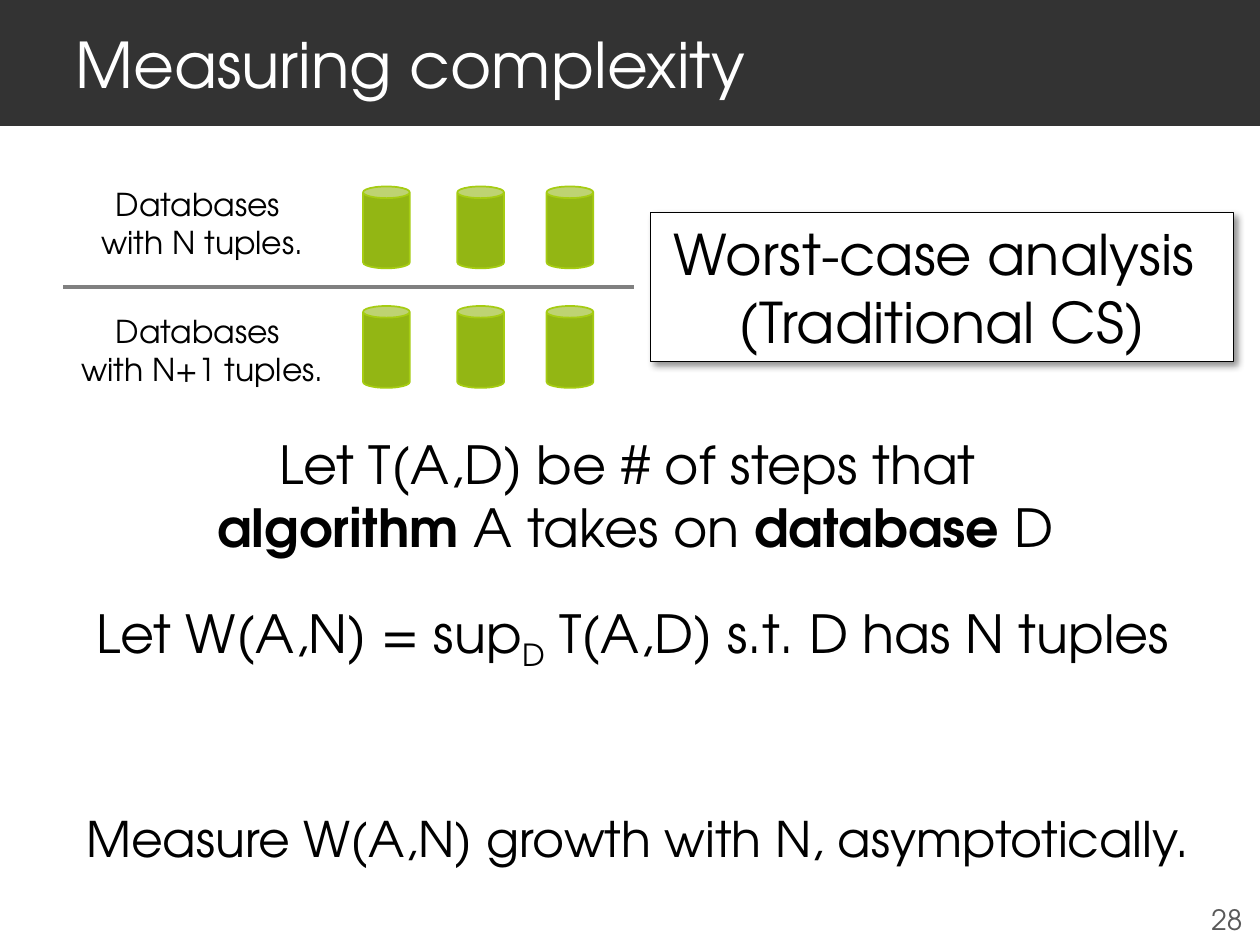
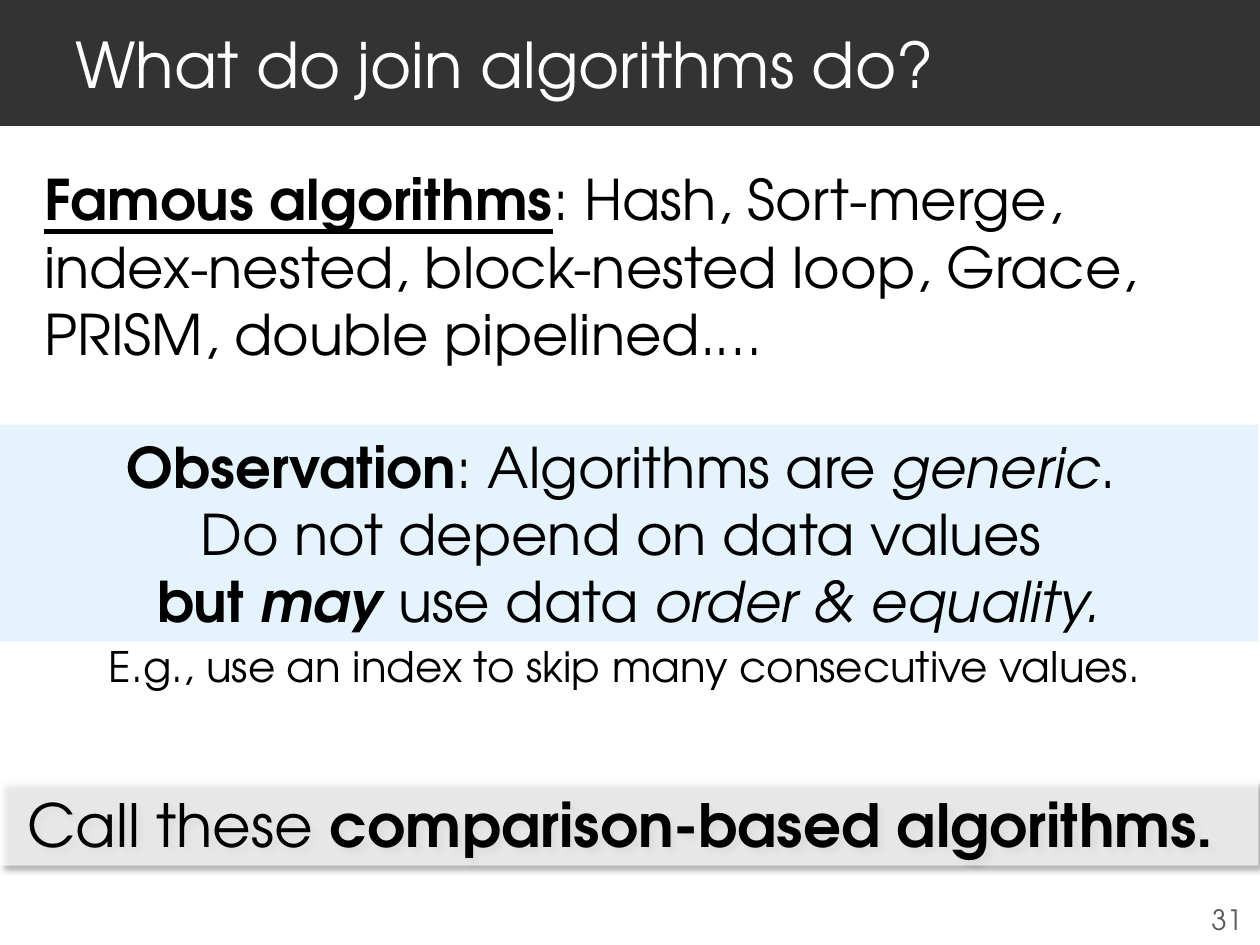
from itertools import product

from lxml import etree
from pptx import Presentation
from pptx.dml.color import RGBColor
from pptx.enum import shapes, text
from pptx.oxml import ns
from pptx.util import Cm, Pt

FONT = "TeX Gyre Adventor"
WIDE, HIGH = 25.4, 19.05
INK, WHITE, DARK, GREY = "000000", "FFFFFF", "333333", "595959"
GREEN, LIME, RULE, SKY = "93B614", "A5CC12", "808080", "E5F3FC"
LEFT, MID = text.PP_ALIGN.LEFT, text.PP_ALIGN.CENTER
RECT, CAN = shapes.MSO_SHAPE.RECTANGLE, shapes.MSO_SHAPE.CAN
MARKS = {"b": "bold", "i": "italic", "u": "underline"}


def color(code):
    return RGBColor.from_string(code)


def node(parent, tag, **attrs):
    return etree.SubElement(parent, ns.qn(tag), attrs)


def assign(target, values):
    for name, value in values.items():
        setattr(target, name, value)


def write(shape, paras, size, ink=INK, align=MID, frame=None):
    """Fill a shape with paragraphs of (text, marks) runs; "-" lowers a run."""
    fit = text.MSO_AUTO_SIZE.SHAPE_TO_FIT_TEXT
    assign(shape.text_frame, {"word_wrap": True, "auto_size": fit,
                              **(frame or {})})
    for i, runs in enumerate(paras):
        body = shape.text_frame
        para = body.add_paragraph() if i else body.paragraphs[0]
        para.alignment = align
        for words, marks in runs:
            run = para.add_run()
            run.text = words
            assign(run.font, {"name": FONT, "size": Pt(size)})
            assign(run.font, {MARKS[m]: True for m in marks if m in MARKS})
            run.font.color.rgb = color(ink)
            if "-" in marks:
                run.font._element.set("baseline", "-25000")


def label(slide, box, paras, size, **look):
    shape = slide.shapes.add_textbox(*map(Cm, box))
    write(shape, paras, size, **look)


def block(slide, box, fill, kind=RECT, line=None, weight=1):
    shape = slide.shapes.add_shape(kind, *map(Cm, box))
    shape.shadow.inherit = False
    shape.fill.solid()
    shape.fill.fore_color.rgb = color(fill)
    if line:
        shape.line.color.rgb = color(line)
        shape.line.width = Pt(weight)
    else:
        shape.line.fill.background()
    return shape


def shade(shape):
    """Cast a soft shadow to the lower right."""
    effects = shape._element.spPr.find(ns.qn("a:effectLst"))
    cast = node(effects, "a:outerShdw", blurRad=str(Pt(4)), dist=str(Pt(3)),
                dir="2700000", algn="tl", rotWithShape="0")
    node(node(cast, "a:srgbClr", val=INK), "a:alpha", val="43000")


def fade(shape, share):
    tint = shape._element.spPr.find(ns.qn("a:solidFill"))[0]
    node(tint, "a:alpha", val=str(share * 1000))


def rule(slide, left, right, y):
    line = slide.shapes.add_connector(
        shapes.MSO_CONNECTOR.STRAIGHT, Cm(left), Cm(y), Cm(right), Cm(y))
    line.line.color.rgb = color(RULE)
    line.line.width = Pt(2)
    node(line._element.spPr, "a:effectLst")


def page(deck, title, number):
    """Add a slide with its title band and page number."""
    slide = deck.slides.add_slide(deck.slide_layouts[6])
    still = {"auto_size": text.MSO_AUTO_SIZE.NONE,
             "vertical_anchor": text.MSO_ANCHOR.MIDDLE}
    band = block(slide, (0, 0, WIDE, 2.54), DARK)
    write(band, [[(title, "")]], 36, WHITE, LEFT,
          {**still, "margin_left": Cm(1.52), "margin_right": Cm(0.76)})
    label(slide, (24.1, 18.03, 1.27, 1.02), [[(number, "")]], 16,
          ink=GREY, frame=still)
    return slide


def cost(deck):
    slide = page(deck, "Measuring complexity", "28")
    for x, y in product((7.32, 9.22, 11.02), (3.76, 6.17)):
        block(slide, (x, y, 0.94, 1.65), GREEN, CAN, LIME)
    for y, count in ((3.61, "N"), (6.17, "N+1")):
        label(slide, (0.84, y, 6.48, 1.8),
              [[("Databases ", "")], [(f"with {count} tuples.", "")]], 18)
    rule(slide, 1.27, 12.78, 5.79)
    card = block(slide, (13.11, 4.29, 11.76, 3), WHITE, line=INK, weight=0.75)
    shade(card)
    write(card, [[("Worst-case analysis ", "")],
                 [("(Traditional CS)", "")]], 32)
    label(slide, (0.74, 8.59, 24.13, 2.82), [
        [("Let T(A,D) be # of steps that ", "")],
        [("algorithm", "b"), (" A takes on ", ""),
         ("database", "b"), (" D", "")]], 30)
    label(slide, (0.43, 11.99, 24.66, 1.55), [
        [("Let W(A,N) = sup", ""), ("D", "-"),
         (" T(A,D) s.t. D has N tuples", "")]], 30)
    label(slide, (0.84, 16.18, 24.03, 1.45),
          [[("Measure W(A,N) growth with N, asymptotically.", "")]], 28)


def joins(deck):
    slide = page(deck, "What do join algorithms do?", "31")
    label(slide, (0.64, 3.2, 23.47, 4.37), [
        [("Famous algorithms", "bu"),
         (": Hash, Sort-merge, index-nested, block-nested loop, Grace, "
          "PRISM, double pipelined.…", "")]], 32, align=LEFT)
    note = block(slide, (0, 8.56, 25.37, 4.37), SKY)
    write(note, [
        [("Observation", "b"), (": Algorithms are ", ""),
         ("generic", "i"), (". ", "")],
        [("Do not depend on data values ", "")],
        [("but ", "b"), ("may ", "bi"), ("use data ", ""),
         ("order & equality.", "i")]], 32)
    label(slide, (0.64, 12.78, 23.9, 1.27),
          [[("E.g., use an index to skip many consecutive values.", "")]], 24)
    strip = block(slide, (0, 15.75, 25.37, 1.7), WHITE)
    fade(strip, 70)
    shade(strip)
    write(strip, [[("Call these ", ""),
                   ("comparison-based algorithms. ", "b")]], 34)


def main():
    deck = Presentation()
    deck.slide_width, deck.slide_height = Cm(WIDE), Cm(HIGH)
    cost(deck)
    joins(deck)
    deck.save("out.pptx")


if __name__ == "__main__":
    main()
